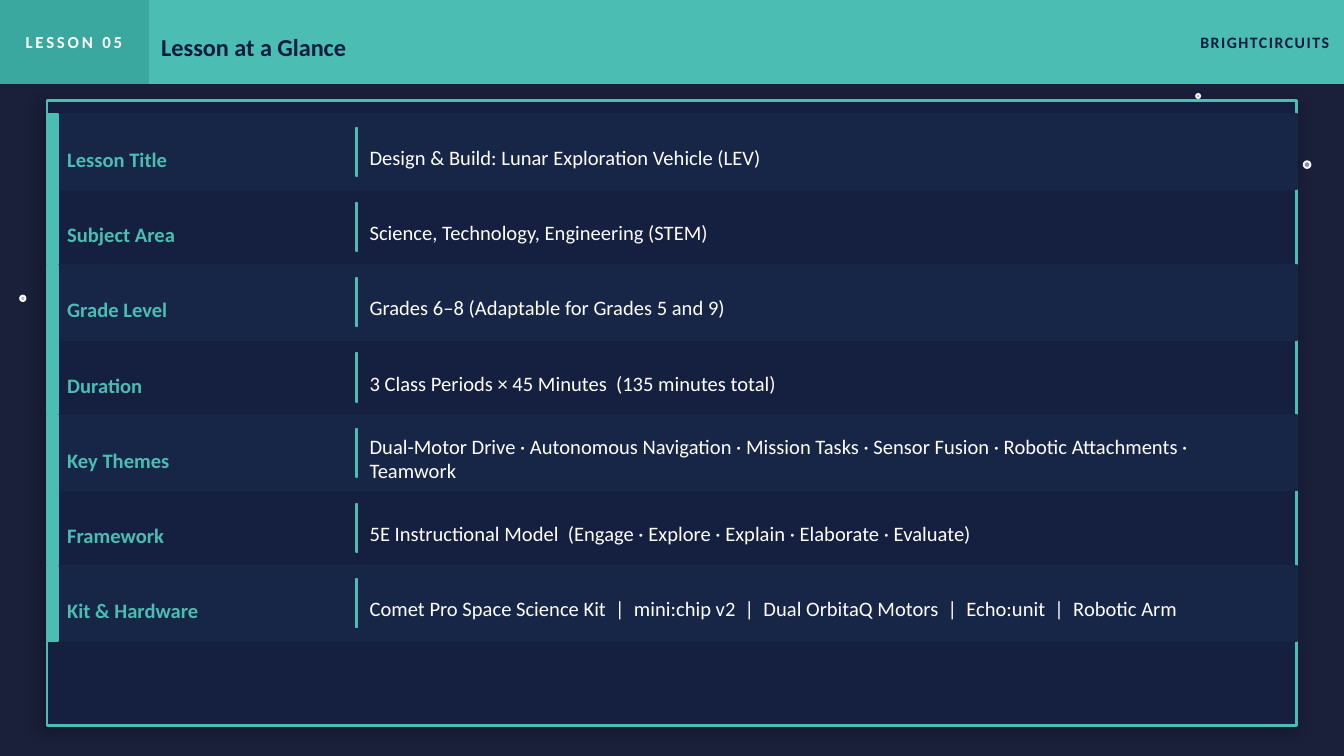
"""Build the "Lesson at a Glance" overview slide."""
from dataclasses import dataclass

from lxml import etree
from pptx import Presentation
from pptx import util as u
from pptx.dml.color import RGBColor
from pptx.enum import shapes, text
from pptx.oxml import ns


@dataclass(frozen=True)
class Theme:
    font: str = "Calibri"
    night: str = "1A1F3A"
    panel: str = "152040"
    band: str = "172547"
    teal: str = "4BBDB3"
    deep_teal: str = "3AA89E"
    ink: str = "0D1B3E"
    white: str = "FFFFFF"
    shadow: str = "000000"
    title_size: float = 13
    body_size: float = 11
    tag_size: float = 9
    brand_size: float = 8.5


theme = Theme()
prs = Presentation()
prs.slide_width, prs.slide_height = u.Inches(10), u.Inches(10 * 9 / 16)
slide = prs.slides.add_slide(prs.slide_layouts[6])
slide.background.fill.solid()
slide.background.fill.fore_color.rgb = RGBColor.from_string(theme.night)


def add_block(left, top, width, height, fill, line=None, weight=1, kind=shapes.MSO_SHAPE.RECTANGLE):
    block = slide.shapes.add_shape(kind, *map(u.Inches, (left, top, width, height)))
    block.shadow.inherit = False
    block.fill.solid()
    block.fill.fore_color.rgb = RGBColor.from_string(fill)
    block.line.color.rgb = RGBColor.from_string(line or fill)
    block.line.width = u.Pt(weight)
    return block


def add_label(left, top, width, height, wording, size, color, bold=True,
              align=text.PP_ALIGN.LEFT, inset_top=0, inset_right=0, spacing=0):
    frame = slide.shapes.add_textbox(*map(u.Inches, (left, top, width, height))).text_frame
    frame.word_wrap = True
    frame.vertical_anchor = text.MSO_ANCHOR.MIDDLE
    frame.margin_left = frame.margin_bottom = 0
    frame.margin_top, frame.margin_right = u.Inches(inset_top), u.Inches(inset_right)
    frame.text = wording
    frame.paragraphs[0].alignment = align
    run = frame.paragraphs[0].runs[0]
    run.font.name, run.font.size, run.font.bold = theme.font, u.Pt(size), bold
    run.font.color.rgb = RGBColor.from_string(color)
    if spacing:
        run._r.get_or_add_rPr().set("spc", str(round(spacing * 100)))


for left, top, diameter, opacity in [(8.9, 0.7, 0.03, 60), (9.7, 1.2, 0.05, 50), (0.15, 2.2, 0.04, 70)]:
    star = add_block(left, top, diameter, diameter, theme.white, kind=shapes.MSO_SHAPE.OVAL)
    star_color = star._element.spPr.find(ns.qn("a:solidFill"))[0]
    etree.SubElement(star_color, ns.qn("a:alpha"), val=str(opacity * 1000))

header_height = 0.62
add_block(0, 0, 10, header_height, theme.teal)
add_block(0, 0, 1.1, header_height, theme.deep_teal)
add_label(0, 0, 1.1, header_height, "LESSON 05", theme.tag_size, theme.white,
          align=text.PP_ALIGN.CENTER, spacing=1.5)
add_label(1.2, 0, 7.5, header_height, "Lesson at a Glance", theme.title_size, theme.ink, inset_top=0.08)
add_label(7.7, 0, 2.3, header_height, "BRIGHTCIRCUITS", theme.brand_size, theme.ink,
          align=text.PP_ALIGN.RIGHT, inset_right=0.11, spacing=0.8)

panel_left, panel_width = 0.35, 9.3
panel = add_block(panel_left, 0.75, panel_width, 4.65, theme.panel, theme.teal, 1.5)
panel_shadow = etree.SubElement(
    panel._element.spPr.find(ns.qn("a:effectLst")), ns.qn("a:outerShdw"),
    blurRad=str(u.Pt(8)), dist=str(u.Pt(3)), dir=str(135 * 60000), algn="bl", rotWithShape="0")
shadow_color = etree.SubElement(panel_shadow, ns.qn("a:srgbClr"), val=theme.shadow)
etree.SubElement(shadow_color, ns.qn("a:alpha"), val="25000")

facts = [
    ("Lesson Title", "Design & Build: Lunar Exploration Vehicle (LEV)"),
    ("Subject Area", "Science, Technology, Engineering (STEM)"),
    ("Grade Level", "Grades 6–8 (Adaptable for Grades 5 and 9)"),
    ("Duration", "3 Class Periods × 45 Minutes  (135 minutes total)"),
    ("Key Themes", "Dual-Motor Drive · Autonomous Navigation · Mission Tasks · Sensor Fusion · "
                   "Robotic Attachments · Teamwork"),
    ("Framework", "5E Instructional Model  (Engage · Explore · Explain · Elaborate · Evaluate)"),
    ("Kit & Hardware", "Comet Pro Space Science Kit  |  mini:chip v2  |  Dual OrbitaQ Motors  |  "
                       "Echo:unit  |  Robotic Arm"),
]
row_height = 0.56
for index, (topic, detail) in enumerate(facts):
    row_top = 0.85 + index * row_height
    if index % 2 == 0:
        add_block(panel_left, row_top, panel_width, row_height, theme.band)
    add_block(panel_left, row_top, 0.08, row_height, theme.teal)
    add_label(0.5, row_top + 0.05, 2.1, 0.46, topic, theme.body_size, theme.teal, inset_top=0.11)
    add_block(2.65, row_top + 0.1, 0.01, 0.36, theme.teal)
    add_label(2.75, row_top + 0.05, 6.75, 0.46, detail, theme.body_size, theme.white,
              bold=False, inset_top=0.08)

prs.save("out.pptx")
